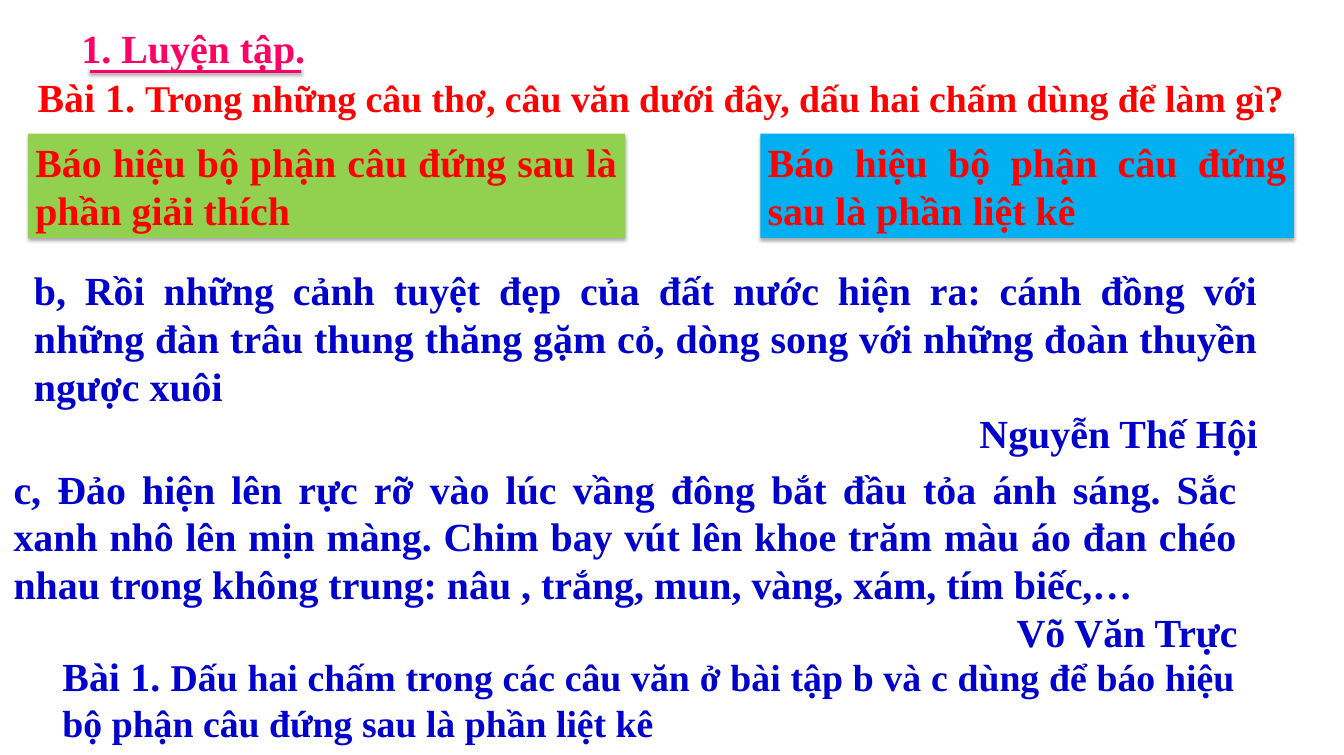
from lxml import etree
from pptx import Presentation
from pptx.dml.color import RGBColor
from pptx.enum.shapes import MSO_CONNECTOR, MSO_SHAPE
from pptx.enum.text import MSO_ANCHOR, MSO_AUTO_SIZE, PP_ALIGN
from pptx.oxml.ns import qn
from pptx.util import Pt

LEFT, RIGHT, JUSTIFY = PP_ALIGN.LEFT, PP_ALIGN.RIGHT, PP_ALIGN.JUSTIFY
TOP = MSO_ANCHOR.TOP
GROW = MSO_AUTO_SIZE.SHAPE_TO_FIT_TEXT
RECTANGLE = MSO_SHAPE.RECTANGLE
STRAIGHT = MSO_CONNECTOR.STRAIGHT
TITLE_ONLY = 5

COLORS = {
    "pink": "FF0066",
    "red": "FF0000",
    "navy": "0000CC",
    "green": "92D050",
    "blue": "00B0F0",
    "black": "000000",
}


class LessonSlide:
    font = "Times New Roman"
    large, medium = 38, 36

    def __init__(self, presentation):
        self.slide = presentation.slides.add_slide(presentation.slide_layouts[TITLE_ONLY])

    def color(self, name):
        return RGBColor.from_string(COLORS[name])

    def fill_text(self, shape, color, paragraphs):
        """Fill a shape with (alignment, [(text, size), ...]) paragraphs."""
        frame = shape.text_frame
        frame.word_wrap = True
        frame.auto_size = GROW
        frame.vertical_anchor = TOP
        for index, (alignment, runs) in enumerate(paragraphs):
            paragraph = frame.add_paragraph() if index else frame.paragraphs[0]
            paragraph.alignment = alignment
            for text, size in runs:
                run = paragraph.add_run()
                run.text = text
                run.font.name = self.font
                run.font.size = Pt(size)
                run.font.bold = True
                run.font.color.rgb = self.color(color)

    def add_shadow(self, shape, blur, distance, opacity):
        effects = etree.SubElement(shape._element.spPr, qn("a:effectLst"))
        shadow = etree.SubElement(
            effects, qn("a:outerShdw"), blurRad=str(Pt(blur)), dist=str(Pt(distance)),
            dir=str(90 * 60000), rotWithShape="0")
        tint = etree.SubElement(shadow, qn("a:srgbClr"), val=COLORS["black"])
        etree.SubElement(tint, qn("a:alpha"), val=str(opacity * 1000))

    def title(self, box, text, color):
        title = self.slide.shapes.title
        title.left, title.top, title.width, title.height = map(Pt, box)
        self.fill_text(title, color, [(LEFT, [(text, self.large)])])

    def underline(self, left, right, y, color):
        line = self.slide.shapes.add_connector(STRAIGHT, Pt(left), Pt(y), Pt(right), Pt(y))
        line.line.color.rgb = self.color(color)
        line.line.width = Pt(3)
        self.add_shadow(line, 3.1, 1.8, 35)

    def text(self, box, color, paragraphs):
        self.fill_text(self.slide.shapes.add_textbox(*map(Pt, box)), color, paragraphs)

    def exercise(self, box, color, label, sentence):
        self.text(box, color, [(JUSTIFY, [(label, self.large), (sentence, self.medium)])])

    def quotation(self, left, top, sentence, author):
        self.text((left, top, 1181.5, 191.5), "navy", [
            (JUSTIFY, [(sentence, self.large)]),
            (RIGHT, [(author, self.large)]),
        ])

    def answer(self, left, width, fill, text):
        card = self.slide.shapes.add_shape(RECTANGLE, Pt(left), Pt(127.5), Pt(width), Pt(99.5))
        card.fill.solid()
        card.fill.fore_color.rgb = self.color(fill)
        card.line.fill.background()
        self.add_shadow(card, 3.5, 2.2, 32)
        self.fill_text(card, "red", [(JUSTIFY, [(text, self.large)])])


def main():
    presentation = Presentation()
    presentation.slide_width, presentation.slide_height = Pt(1281.6), Pt(720)
    lesson = LessonSlide(presentation)

    # Heading
    lesson.title((70.5, 18.5, 330, 53.5), "1. Luyện tập.", "pink")
    lesson.underline(85.5, 287.5, 68.5, "pink")

    # Question and its answer
    lesson.exercise((28.8, 66.2, 1224, 53.5), "red", "Bài 1. ",
                    "Trong những câu thơ, câu văn dưới đây, dấu hai chấm dùng để làm gì?")
    lesson.exercise((52.5, 617.8, 1132.5, 97), "navy", "Bài 1. ",
                    "Dấu hai chấm trong các câu văn ở bài tập b và c dùng để báo hiệu "
                    "bộ phận câu đứng sau là phần liệt kê")

    # Quotations
    lesson.quotation(25.2, 249.8,
                     "b, Rồi những cảnh tuyệt đẹp của đất nước hiện ra: cánh đồng với những "
                     "đàn trâu thung thăng gặm cỏ, dòng song với những đoàn thuyền ngược xuôi",
                     "Nguyễn Thế Hội")
    lesson.quotation(5.8, 439.2,
                     "c, Đảo hiện lên rực rỡ vào lúc vầng đông bắt đầu tỏa ánh sáng. Sắc xanh "
                     "nhô lên mịn màng. Chim bay vút lên khoe trăm màu áo đan chéo nhau trong "
                     "không trung: nâu , trắng, mun, vàng, xám, tím biếc,…",
                     "Võ Văn Trực")

    # Answer choices
    lesson.answer(26.6, 569.5, "green", "Báo hiệu bộ phận câu đứng sau là phần giải thích")
    lesson.answer(725, 509, "blue", "Báo hiệu bộ phận câu đứng sau là phần liệt kê")

    presentation.save("out.pptx")


if __name__ == "__main__":
    main()
